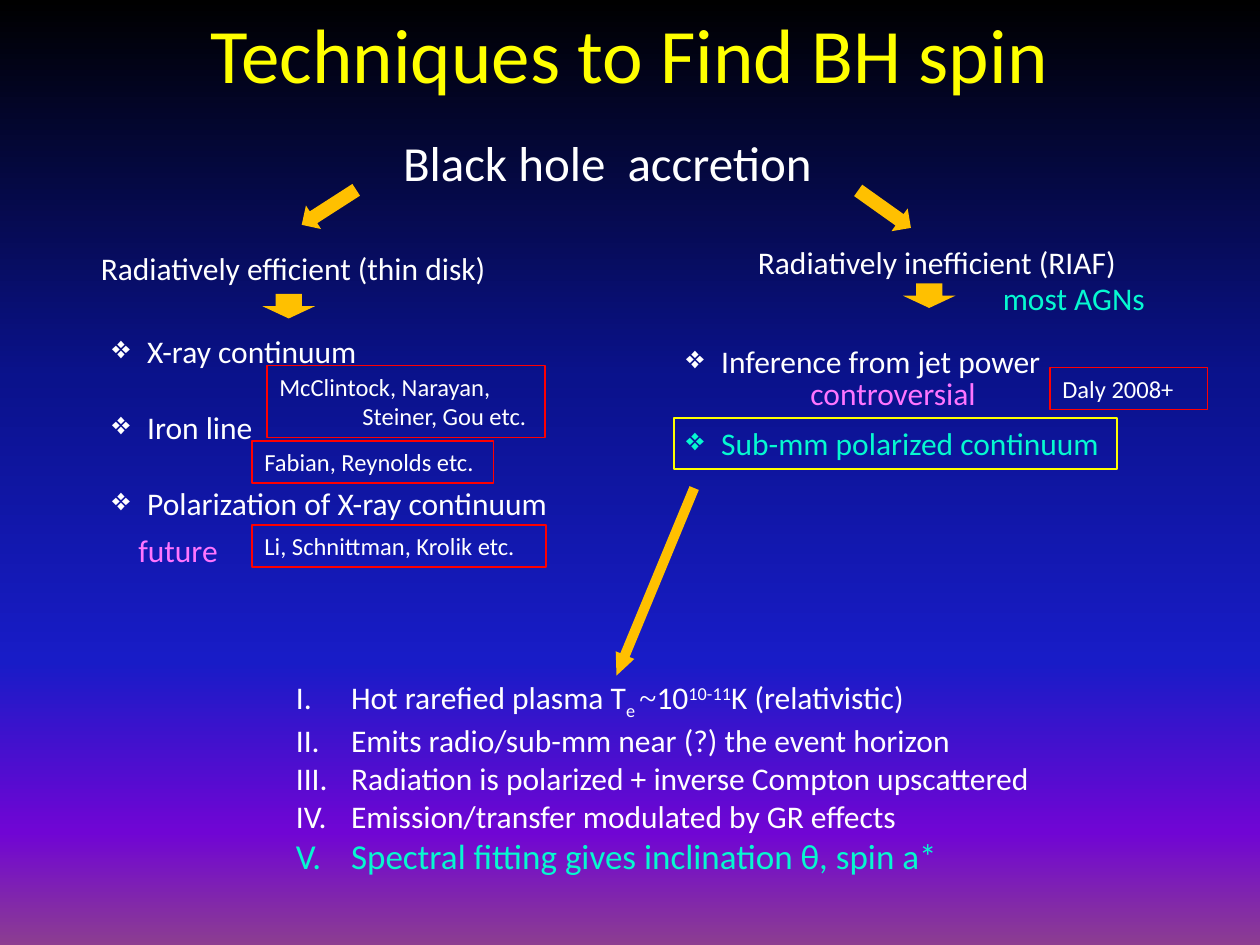
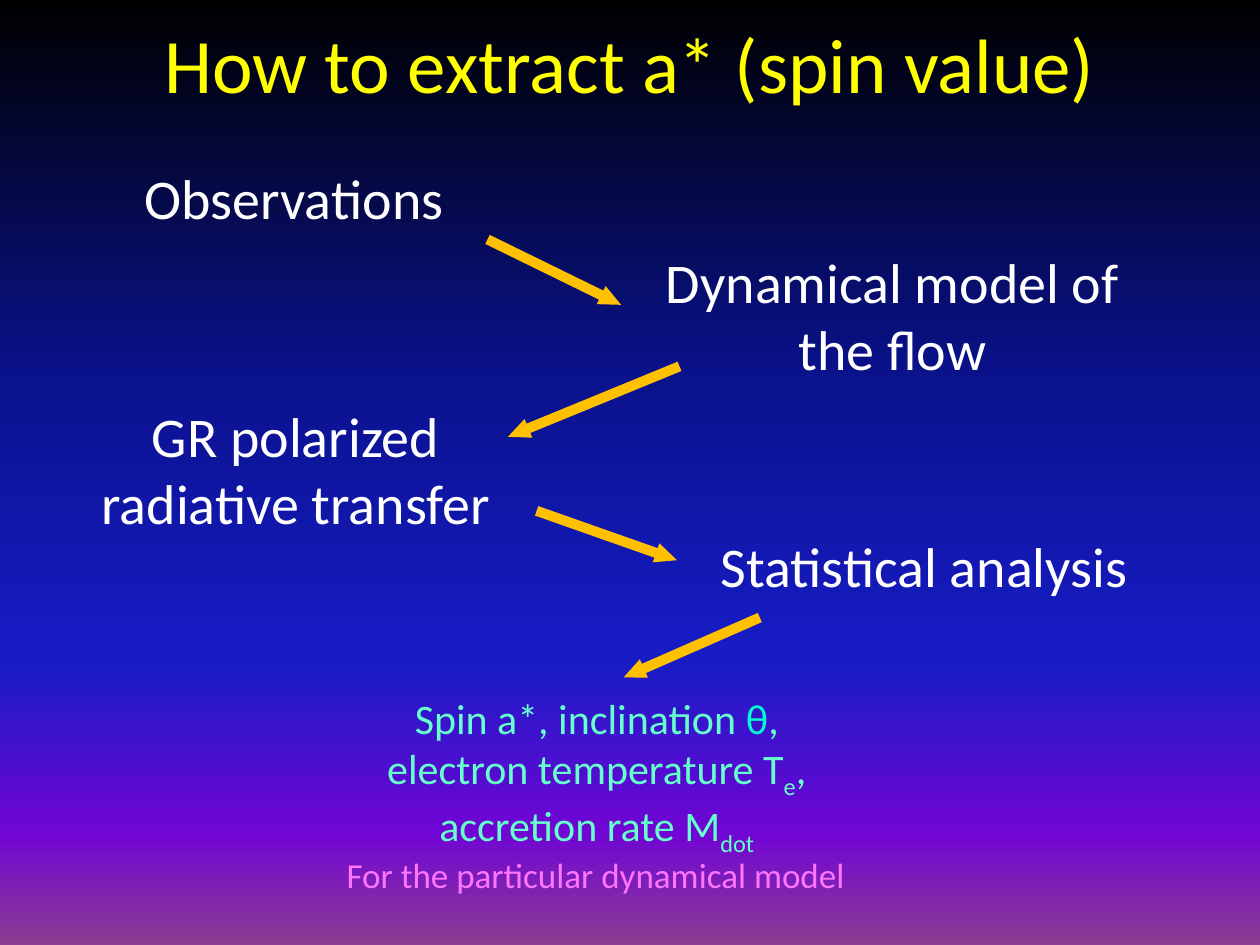
from lxml.etree import SubElement
from pptx import Presentation
from pptx.dml.color import RGBColor
from pptx.enum.shapes import MSO_SHAPE as Shape
from pptx.enum.text import MSO_ANCHOR as Anchor, MSO_AUTO_SIZE as Fit, PP_ALIGN as Align
from pptx.oxml.ns import qn
from pptx.util import Pt

WHITE = RGBColor(0xFF, 0xFF, 0xFF)
YELLOW = RGBColor(0xFF, 0xFF, 0x00)
GOLD = RGBColor(0xFF, 0xC0, 0x00)
RED = RGBColor(0xFF, 0x00, 0x00)
TEAL = RGBColor(0x06, 0xF8, 0xD0)
MINT = RGBColor(0x66, 0xFF, 0xCC)
PINK = RGBColor(0xFF, 0x75, 0xFF)
NIGHT = [
    (0, RGBColor(0x00, 0x00, 0x00)),
    (40, RGBColor(0x0A, 0x12, 0x8C)),
    (70, RGBColor(0x18, 0x1C, 0xC7)),
    (88, RGBColor(0x70, 0x05, 0xD4)),
    (100, RGBColor(0x8C, 0x3D, 0x91)),
]
FONT = "Calibri"
SERIF = "Times New Roman"


def paint(master):
    fill = master.background.fill
    fill.gradient()
    fill.gradient_angle = 270
    stops = master.element.find(".//" + qn("a:gsLst"))
    for stop in list(stops):
        stops.remove(stop)
    for pos, color in NIGHT:
        stop = SubElement(stops, qn("a:gs"), pos=str(pos * 1000))
        SubElement(stop, qn("a:srgbClr"), val=str(color))


def add_run(para, text, size, color, base=0, font=FONT):
    run = para.add_run()
    run.text = text
    run.font.size = Pt(size)
    run.font.name = font
    run.font.color.rgb = color
    if base:
        run.font._element.set("baseline", str(base * 1000))


def indent(para, left, first=0):
    props = para._p.get_or_add_pPr()
    props.set("marL", str(Pt(left)))
    props.set("indent", str(Pt(first)))
    return props


def bullet(para):
    SubElement(indent(para, 20, -20), qn("a:buChar"), char="❖")


def number(para):
    SubElement(indent(para, 31.5, -31.5), qn("a:buAutoNum"), type="romanUcPeriod")


def write(frame, paras, size, color, align=Align.LEFT, mark=None, gap=0):
    for i, runs in enumerate(paras):
        para = frame.add_paragraph() if i else frame.paragraphs[0]
        if mark:
            mark(para)
        para.alignment = align
        if i and gap:
            para.space_before = Pt(gap)
        for run in [runs] if isinstance(runs, str) else runs:
            if isinstance(run, str):
                run = (run, {})
            add_run(para, run[0], **{"size": size, "color": color, **run[1]})


def add_title(prs, text, height):
    slide = prs.slides.add_slide(prs.slide_layouts[5])
    title = slide.shapes.title
    title.left, title.top, title.width, title.height = Pt(36), Pt(0), Pt(648), Pt(height)
    frame = title.text_frame
    frame.auto_size = Fit.NONE
    frame.vertical_anchor = Anchor.MIDDLE
    write(frame, [text], 44, YELLOW, Align.CENTER)
    return slide


def add_text(slide, at, paras, size=18, color=WHITE, wrap=False, **style):
    box = slide.shapes.add_textbox(*map(Pt, at))
    box.text_frame.word_wrap = wrap
    box.text_frame.auto_size = Fit.SHAPE_TO_FIT_TEXT
    write(box.text_frame, paras, size, color, **style)


def add_frame(slide, at, paras, size=14, color=WHITE, edge=RED, width=0.75, wrap=True, **style):
    box = slide.shapes.add_shape(Shape.RECTANGLE, *map(Pt, at))
    box.shadow.inherit = False
    box.fill.background()
    box.line.color.rgb = edge
    box.line.width = Pt(width)
    frame = box.text_frame
    frame.word_wrap = wrap
    frame.auto_size = Fit.SHAPE_TO_FIT_TEXT
    frame.vertical_anchor = Anchor.TOP
    write(frame, paras, size, color, **style)
    return box


def add_arrow(slide, at, turn=0, head=0.5):
    arrow = slide.shapes.add_shape(Shape.DOWN_ARROW, *map(Pt, at))
    arrow.shadow.inherit = False
    arrow.fill.solid()
    arrow.fill.fore_color.rgb = GOLD
    arrow.line.fill.background()
    arrow.rotation = turn
    arrow.adjustments[1] = head


def add_slim(slide, left, top, length, turn):
    add_arrow(slide, (left, top, 11.5, length), turn, 1.1)


def find_spin(prs):
    slide = add_title(prs, "Techniques to Find BH spin", 60)
    add_text(slide, (222, 72, 250, 41), ["Black hole  accretion"], 28, align=Align.CENTER)
    add_arrow(slide, (180, 100, 16, 37), 57.3)
    add_arrow(slide, (497.5, 101, 16, 37), 305.4)
    add_arrow(slide, (150, 168, 30, 14))
    add_arrow(slide, (516, 162, 30, 14))

    add_text(slide, (50.5, 139, 237.5, 29), ["Radiatively efficient (thin disk)"])
    add_text(slide, (426, 135.5, 222, 29), ["Radiatively inefficient (RIAF)"])
    add_text(slide, (566, 156, 96.5, 29), ["most AGNs"], color=TEAL)
    add_text(
        slide, (57, 186, 267, 117),
        ["X-ray continuum", "Iron line", "Polarization of X-ray continuum"],
        mark=bullet, gap=22,
    )
    add_text(slide, (385, 192, 220, 29), ["Inference from jet power"], mark=bullet)

    add_frame(slide, (600, 210, 90, 24), ["Daly 2008+"])
    team = add_frame(slide, (152.5, 209, 159, 41), ["McClintock, Narayan,", "Steiner, Gou etc."])
    indent(team.text_frame.paragraphs[1], 47.5)
    add_frame(slide, (144, 252, 138, 24), ["Fabian, Reynolds etc."])
    add_frame(slide, (144, 300, 168, 24), ["Li, Schnittman, Krolik etc."])
    add_frame(
        slide, (385, 239, 253.5, 29), ["Sub-mm polarized continuum"],
        18, TEAL, YELLOW, 1.25, wrap=False, mark=bullet,
    )
    add_text(slide, (456, 210, 110, 29), ["controversial"], color=PINK)
    add_text(slide, (72, 300, 60.5, 29), ["future"], color=PINK)

    add_slim(slide, 368.75, 274.5, 116, 22.5)
    plasma = [
        "Hot rarefied plasma T", ("e ", {"base": -25}), ("~", {"font": SERIF}),
        "10", ("10-11", {"base": 30}), "K (relativistic)",
    ]
    add_text(
        slide, (162, 384, 438.5, 119),
        [
            plasma,
            "Emits radio/sub-mm near (?) the event horizon",
            "Radiation is polarized + inverse Compton upscattered",
            "Emission/transfer modulated by GR effects",
            [("Spectral fitting gives inclination θ, spin a*", {"size": 20, "color": TEAL})],
        ],
        wrap=True, mark=number,
    )


def get_spin(prs):
    slide = add_title(prs, "How to extract a* (spin value)", 72)
    steps = [
        ((72, 90, 192, 46), ["Observations"]),
        ((354, 138, 312, 85), ["Dynamical model of the flow"]),
        ((13, 226, 312, 85), ["GR polarized", "radiative transfer"]),
        ((372, 300, 312, 46), ["Statistical analysis"]),
    ]
    for at, paras in steps:
        add_text(slide, at, paras, 32, wrap=True, align=Align.CENTER)
    low = {"base": -25}
    add_text(
        slide, (185, 392, 312, 94),
        [
            ["Spin a*, inclination ", ("θ", {"color": TEAL}), ","],
            ["electron temperature T", ("e", low), ", accretion rate M", ("dot", low)],
        ],
        24, MINT, wrap=True, align=Align.CENTER,
    )
    add_text(slide, (191, 484, 302.5, 31.5), ["For the particular dynamical model"], 20, PINK)
    for left, top, length, turn in [
        (311, 113, 85, 296.1),
        (333.5, 176.5, 106, 67.7),
        (341, 263.5, 85, 289.4),
        (389.5, 327.5, 85, 66.3),
    ]:
        add_slim(slide, left, top, length, turn)


def main():
    prs = Presentation()
    prs.slide_width, prs.slide_height = Pt(720), Pt(540)
    paint(prs.slide_master)
    find_spin(prs)
    get_spin(prs)
    prs.save("out.pptx")


if __name__ == "__main__":
    main()
